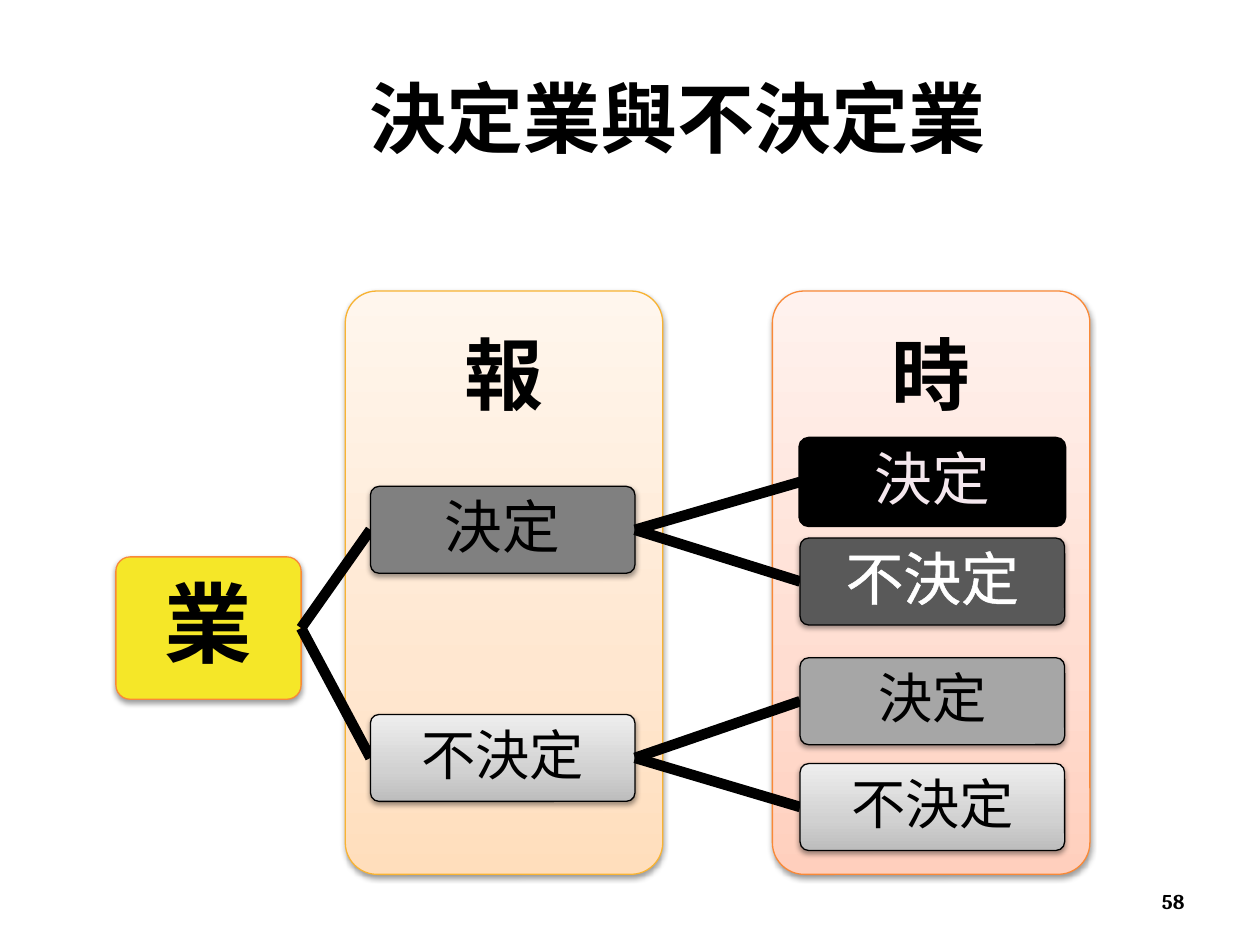
from lxml.etree import SubElement
from copy import deepcopy
from pptx import Presentation
from pptx.dml.color import RGBColor
from pptx.enum.shapes import MSO_CONNECTOR, MSO_SHAPE
from pptx.enum.text import MSO_ANCHOR, PP_ALIGN
from pptx.oxml.ns import qn
from pptx.util import Inches, Pt

# Tree grid, in inches
ROOT = (0.92, 4.42, 1.47, 1.13)
PANEL_X, PANEL_Y, PANEL_W, PANEL_H = (2.74, 6.13), 2.31, 2.52, 4.63
NODE_X, NODE_W, NODE_H = (2.94, 6.35), 2.1, 0.69
HEAD_H = 1.39

# Gradients run from the bottom up
STOPS = (0, 0.35, 1)
ORANGE = ("FFDEBC", "FFE7D0", "FFF6ED")
RED = ("FFCFBD", "FFDDD1", "FFF2EE")
GREY = ("BDBDBD", "D1D1D1", "EEEEEE")

PANELS = [("報", ORANGE, "F8B333"), ("時", RED, "F98937")]

# Branches: (text, top, fill, text colour, size), then their leaves
BRANCHES = [
    (("決定", 3.86, "808080", "000000", 33),
     [("決定", 3.48, "000000", "F4E7ED", 33),
      ("不決定", 4.27, "595959", "FFFFFF", 33)]),
    (("不決定", 5.67, GREY, "000000", 31),
     [("決定", 5.22, "A6A6A6", "000000", 31),
      ("不決定", 6.06, GREY, "000000", 31)]),
]


def rgb(value):
    return RGBColor.from_string(value)


def inches(box):
    return [Inches(v) for v in box]


def write(sp, text, size, color="000000", bold=False, align=PP_ALIGN.CENTER,
          font="Cambria", inset=0.03, spacing=0.9):
    tf = sp.text_frame
    tf.word_wrap = True
    tf.vertical_anchor = MSO_ANCHOR.MIDDLE
    tf.margin_left = tf.margin_right = Inches(inset)
    tf.margin_top = tf.margin_bottom = Inches(min(inset, 0.05))
    p = tf.paragraphs[0]
    p.alignment = align
    p.line_spacing = spacing
    r = p.add_run()
    r.text = text
    r.font.size = Pt(size)
    r.font.bold = bold
    r.font.color.rgb = rgb(color)
    r.font.name = font
    return r


def fill_gradient(sp, colors):
    sp.fill.gradient()
    sp.fill.gradient_angle = 90
    stop_list = next(sp._element.spPr.iter(qn("a:gsLst")))
    stop_list.append(deepcopy(stop_list[-1]))
    for stop, position, color in zip(sp.fill.gradient_stops, STOPS, colors):
        stop.position = position
        stop.color.rgb = rgb(color)


def add_shadow(sp):
    effects = sp._element.spPr.find(qn("a:effectLst"))
    shadow = SubElement(effects, qn("a:outerShdw"), blurRad="40000",
                        dist="20000", dir="5400000", rotWithShape="0")
    color = SubElement(shadow, qn("a:srgbClr"), val="000000")
    SubElement(color, qn("a:alpha"), val="38000")


def add_box(s, box, fill, line, width=0.75, shadow=True):
    sp = s.shapes.add_shape(MSO_SHAPE.ROUNDED_RECTANGLE, *inches(box))
    sp.adjustments[0] = 0.1
    sp.shadow.inherit = False
    if isinstance(fill, str):
        sp.fill.solid()
        sp.fill.fore_color.rgb = rgb(fill)
    else:
        fill_gradient(sp, fill)
    sp.line.color.rgb = rgb(line)
    sp.line.width = Pt(width)
    if shadow:
        add_shadow(sp)
    return sp


def add_link(s, start, end):
    link = s.shapes.add_connector(MSO_CONNECTOR.STRAIGHT,
                                  *inches(start + end))
    link.line.color.rgb = rgb("000000")
    link.line.width = Pt(6)
    SubElement(link._element.spPr, qn("a:effectLst"))


def outline_text(r, color):
    ln = r.font._element.makeelement(qn("a:ln"), {"w": str(Pt(0.75))})
    fill = SubElement(ln, qn("a:solidFill"))
    SubElement(fill, qn("a:srgbClr"), val=color)
    r.font._element.insert(0, ln)


def add_node(s, column, node, start):
    """Link a node to its parent and return the point its own links leave."""
    text, top, fill, color, size = node
    left, middle = NODE_X[column], top + NODE_H / 2
    add_link(s, start, (left, middle))
    black = fill == "000000"
    sp = add_box(s, (left, top, NODE_W, NODE_H), fill, "000000",
                 2 if black else 0.75, not black)
    r = write(sp, text, size, color)
    if color == "FFFFFF":
        outline_text(r, color)
    return left + NODE_W, middle


def add_panel(s, left, heading, fill, line):
    add_box(s, (left, PANEL_Y, PANEL_W, PANEL_H), fill, line)
    sp = s.shapes.add_textbox(*inches((left, PANEL_Y, PANEL_W, HEAD_H)))
    write(sp, heading, 45, bold=True)


def main():
    prs = Presentation()
    prs.slide_width, prs.slide_height = Inches(10), Inches(7.5)
    s = prs.slides.add_slide(prs.slide_layouts[5])

    # Title
    title = s.shapes.title
    title.left, title.top, title.width, title.height = inches(
        (2.83, 0.3, 6.67, 1.25))
    write(title, "決定業與不決定業", 44, bold=True, align=PP_ALIGN.LEFT,
          font="Noto Sans CJK SC", inset=0.1, spacing=1)

    # Column panels
    for left, panel in zip(PANEL_X, PANELS):
        add_panel(s, left, *panel)

    # Tree
    write(add_box(s, ROOT, "F5E728", "F98937"), "業", 50, bold=True)
    left, top, width, height = ROOT
    root_end = (left + width, top + height / 2)
    for branch, leaves in BRANCHES:
        branch_end = add_node(s, 0, branch, root_end)
        for leaf in leaves:
            add_node(s, 1, leaf, branch_end)

    # Page number
    number = s.shapes.add_textbox(*inches((7.17, 6.95, 2.33, 0.4)))
    write(number, "58", 12, bold=True, align=PP_ALIGN.RIGHT, inset=0.1,
          spacing=1)

    prs.save("out.pptx")


if __name__ == "__main__":
    main()
